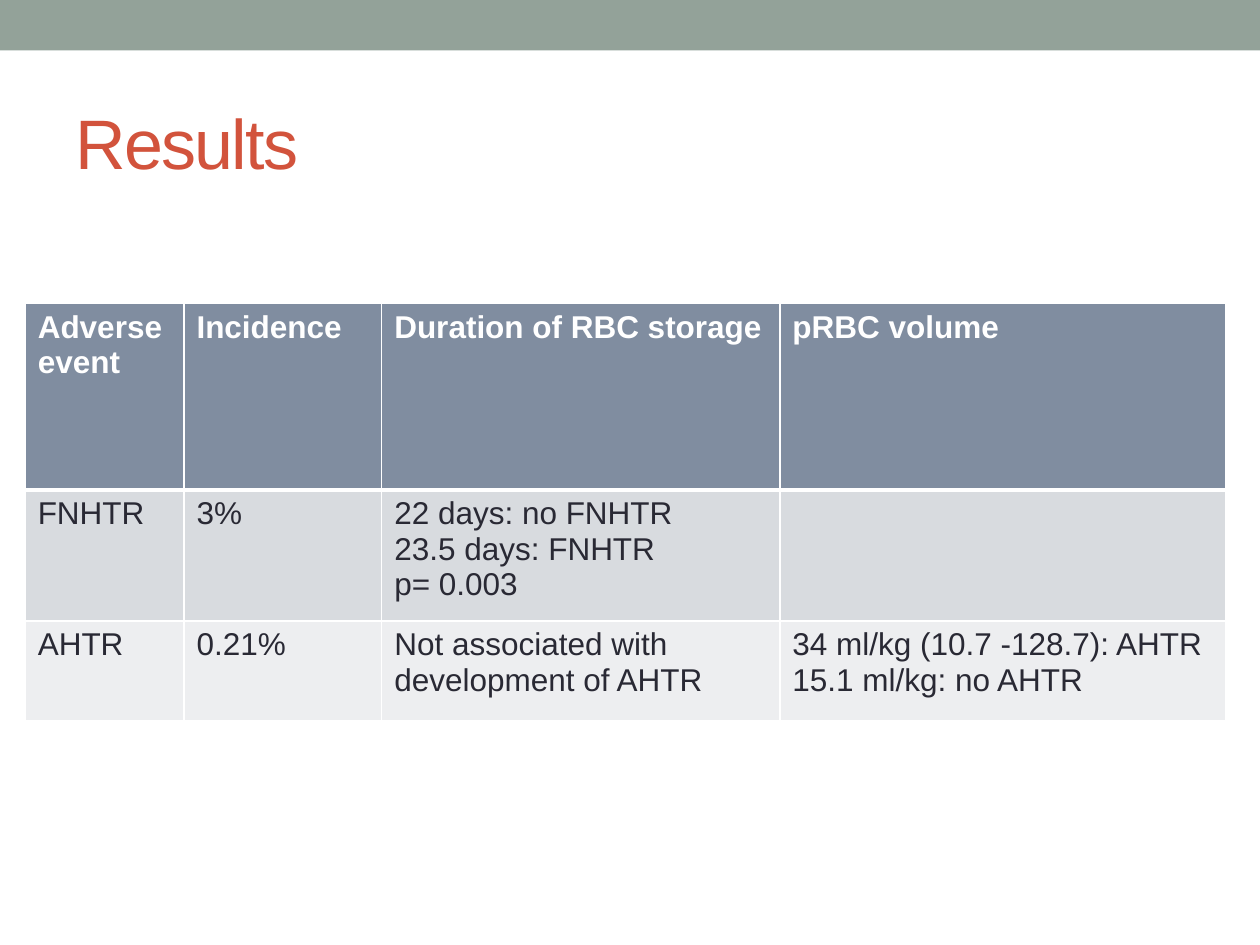
from lxml import etree
from pptx import Presentation
from pptx.dml.color import RGBColor
from pptx.enum.shapes import MSO_SHAPE
from pptx.enum.text import MSO_ANCHOR
from pptx.oxml.ns import qn
from pptx.util import Inches, Pt

RECTANGLE = MSO_SHAPE.RECTANGLE
MIDDLE = MSO_ANCHOR.MIDDLE

WIDTH, HEIGHT = 10, 7.5
FONT = "Arial"
WHITE, INK = "FFFFFF", "292934"
BAND_COLOR, TITLE_COLOR = "93A299", "D2533C"
ROW_FILLS = ["808DA0", "D8DBDF", "EDEEF0"]

TITLE = "Results"
RESULTS = [
    ["Adverse event", "Incidence", "Duration of RBC storage", "pRBC volume"],
    ["FNHTR", "3%", "22 days: no FNHTR\n23.5 days: FNHTR\np= 0.003", ""],
    ["AHTR", "0.21%", "Not associated with development of AHTR",
     "34 ml/kg (10.7 -128.7): AHTR\n15.1 ml/kg: no AHTR"],
]
COLUMN_WIDTHS = [1.26, 1.57, 3.16, 3.54]
ROW_HEIGHTS = [1.48, 1.04, 0.79]
TABLE_LEFT, TABLE_TOP = 0.2, 2.41


def rgb(color):
    """Turn a hex string into a colour."""
    return RGBColor.from_string(color)


def write(frame, text, size=18, color=INK, bold=False, spacing=0):
    """Fill a text frame, one paragraph for each line of text."""
    frame.word_wrap = True
    frame.text = text
    for paragraph in frame.paragraphs:
        paragraph.font.size = Pt(size)
        for run in paragraph.runs:
            run.font.name = FONT
            run.font.size = Pt(size)
            run.font.bold = bold
            run.font.color.rgb = rgb(color)
            if spacing:
                run.font._element.set("spc", str(spacing * 100))


def add_borders(cell, color, **widths):
    """Draw the cell's borders, with widths in points keyed by side."""
    properties = cell._tc.get_or_add_tcPr()
    for side in "LRTB":
        line = etree.SubElement(properties, qn(f"a:ln{side}"), w=str(Pt(widths.get(side, 1))))
        fill = etree.SubElement(line, qn("a:solidFill"))
        etree.SubElement(fill, qn("a:srgbClr"), val=color)


def add_band(slide):
    """Add the coloured band along the top edge."""
    band = slide.shapes.add_shape(RECTANGLE, 0, 0, Inches(WIDTH), Inches(0.4))
    band.shadow.inherit = False
    band.fill.solid()
    band.fill.fore_color.rgb = rgb(BAND_COLOR)
    band.line.fill.background()


def add_title(slide):
    """Add the slide's heading."""
    margin = WIDTH * 0.05
    heading = slide.shapes.add_textbox(
        Inches(margin), Inches(0.58), Inches(WIDTH - 2 * margin), Inches(1.08))
    heading.text_frame.vertical_anchor = MIDDLE
    write(heading.text_frame, TITLE, size=40, color=TITLE_COLOR, spacing=-1)


def add_results(slide):
    """Add the table of adverse events."""
    table = slide.shapes.add_table(
        len(ROW_HEIGHTS), len(COLUMN_WIDTHS), Inches(TABLE_LEFT), Inches(TABLE_TOP),
        Inches(sum(COLUMN_WIDTHS)), Inches(sum(ROW_HEIGHTS))).table
    for column, width in zip(table.columns, COLUMN_WIDTHS):
        column.width = Inches(width)
    for index, (row, height) in enumerate(zip(table.rows, ROW_HEIGHTS)):
        row.height = Inches(height)
        header = index == 0
        for cell, text in zip(row.cells, RESULTS[index]):
            write(cell.text_frame, text, color=WHITE if header else INK, bold=header)
            add_borders(cell, WHITE, B=3 if header else 1, T=3 if index == 1 else 1)
            cell.fill.solid()
            cell.fill.fore_color.rgb = rgb(ROW_FILLS[index])


def main():
    """Build the slide and save it."""
    deck = Presentation()
    deck.slide_width, deck.slide_height = Inches(WIDTH), Inches(HEIGHT)
    slide = deck.slides.add_slide(deck.slide_layouts[6])
    add_band(slide)
    add_title(slide)
    add_results(slide)
    deck.save("out.pptx")


if __name__ == "__main__":
    main()
